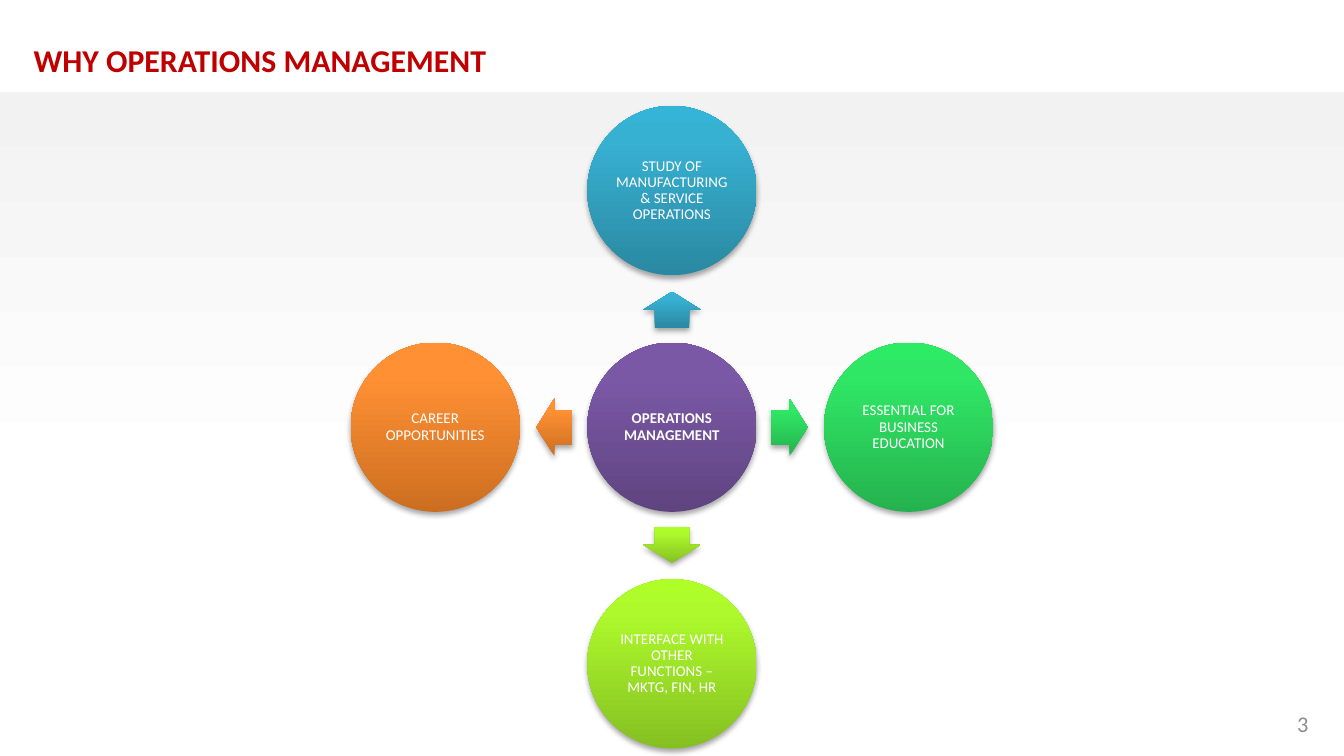
from lxml.etree import SubElement
from pptx import Presentation
from pptx.dml.color import RGBColor
from pptx.enum.shapes import MSO_SHAPE as SHAPE
from pptx.enum.text import MSO_ANCHOR as ANCHOR, PP_ALIGN as ALIGN
from pptx.oxml.ns import qn
from pptx.util import Pt

W, H = 720, 405
CX, CY = 360, 228.9
DIAMETER = 90.7
STEP = 126.8
ARROW_STEP = 63
ARROW_W, ARROW_H = 19.4, 30.8
BAND_TOP = 49.5

TITLE = "WHY OPERATIONS MANAGEMENT"
PAGE = "3"
HUB = ("OPERATIONS MANAGEMENT", ("5F4480", "7B58A6", "7C57A8"))
SPOKES = [
    ("STUDY OF MANUFACTURING & SERVICE OPERATIONS", (0, -1), 270,
     ("2A88A2", "37B1D2", "34B4D6")),
    ("ESSENTIAL FOR BUSINESS EDUCATION", (1, 0), 0,
     ("25B24E", "30E765", "2DEB64")),
    ("INTERFACE WITH OTHER FUNCTIONS – MKTG, FIN, HR", (0, 1), 90,
     ("85C022", "ADF92C", "AFFE28")),
    ("CAREER OPPORTUNITIES", (-1, 0), 180,
     ("CC6E20", "FF9034", "FF9136")),
]


def rgb(value):
    return RGBColor.from_string(value)


def add_text(tf, text, size, color, align, bold=False):
    tf.word_wrap = True
    p = tf.paragraphs[0]
    p.alignment = align
    r = p.add_run()
    r.text = text
    r.font.size = Pt(size)
    r.font.name = "Calibri"
    r.font.bold = bold
    r.font.color.rgb = rgb(color)
    return p


def set_gradient(sp, stops, angle):
    sp.fill.gradient()
    sp.fill.gradient_angle = angle
    grad = sp._element.spPr.find(qn("a:gradFill"))
    grad.set("rotWithShape", "0")
    gs_list = grad.find(qn("a:gsLst"))
    for gs in list(gs_list):
        gs_list.remove(gs)
    for pos, color in stops:
        gs = SubElement(gs_list, qn("a:gs"), pos=str(pos * 1000))
        SubElement(gs, qn("a:srgbClr"), val=color)


def add_shape(slide, kind, box, stops, angle):
    sp = slide.shapes.add_shape(kind, *map(Pt, box))
    sp.line.fill.background()
    sp.shadow.inherit = False
    set_gradient(sp, stops, angle)
    return sp


def add_glossy(slide, kind, cx, cy, w, h, colors):
    box = (cx - w / 2, cy - h / 2, w, h)
    sp = add_shape(slide, kind, box, zip((0, 80, 100), colors), 90)
    effects = sp._element.spPr.find(qn("a:effectLst"))
    shadow = SubElement(effects, qn("a:outerShdw"), blurRad=str(Pt(3.1)),
                        dist=str(Pt(1.8)), dir="5400000", rotWithShape="0")
    color = SubElement(shadow, qn("a:srgbClr"), val="000000")
    SubElement(color, qn("a:alpha"), val="35000")
    return sp


def add_circle(slide, cx, cy, text, colors, bold=False):
    sp = add_glossy(slide, SHAPE.OVAL, cx, cy, DIAMETER, DIAMETER, colors)
    tf = sp.text_frame
    tf.margin_left = tf.margin_right = tf.margin_top = tf.margin_bottom = Pt(0.8)
    tf.vertical_anchor = ANCHOR.MIDDLE
    p = add_text(tf, text, 8, "FFFFFF", ALIGN.CENTER, bold)
    p.line_spacing = 0.9


def add_arrow(slide, cx, cy, rotation, colors):
    sp = add_glossy(slide, SHAPE.RIGHT_ARROW, cx, cy, ARROW_W, ARROW_H, colors)
    sp.adjustments[0] = 0.6
    sp.adjustments[1] = 0.5
    sp.rotation = rotation


def main():
    prs = Presentation()
    prs.slide_width, prs.slide_height = Pt(W), Pt(H)
    slide = prs.slides.add_slide(prs.slide_layouts[5])

    add_shape(slide, SHAPE.RECTANGLE, (0, BAND_TOP, W, H - BAND_TOP),
              [(0, "F2F2F2"), (58, "FFFFFF")], 270)

    title = slide.shapes.title
    title.left, title.top, title.width, title.height = map(Pt, (10.8, 18, 535, 28))
    title.text_frame.vertical_anchor = ANCHOR.TOP
    add_text(title.text_frame, TITLE, 17, "C00000", ALIGN.LEFT, True)

    page = slide.shapes.add_textbox(*map(Pt, (540, 376.6, 168, 21.6)))
    page.text_frame.vertical_anchor = ANCHOR.MIDDLE
    add_text(page.text_frame, PAGE, 12, "8C8C8C", ALIGN.RIGHT)

    hub_text, hub_colors = HUB
    add_circle(slide, CX, CY, hub_text, hub_colors, True)
    for text, (dx, dy), rotation, colors in SPOKES:
        add_arrow(slide, CX + dx * ARROW_STEP, CY + dy * ARROW_STEP, rotation, colors)
        add_circle(slide, CX + dx * STEP, CY + dy * STEP, text, colors)

    prs.save("out.pptx")


if __name__ == "__main__":
    main()
